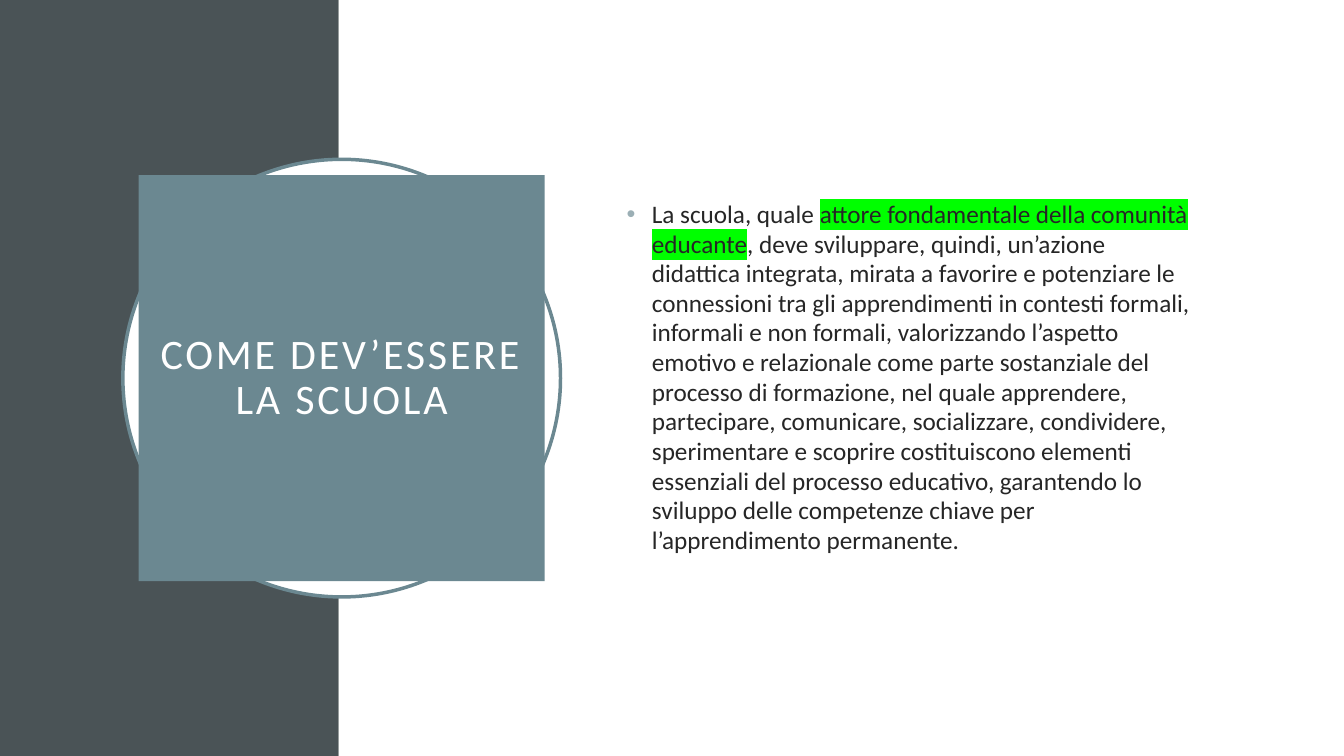
from lxml import etree
from pptx import Presentation
from pptx.dml.color import RGBColor
from pptx.enum.shapes import MSO_SHAPE
from pptx.enum.text import MSO_ANCHOR, PP_ALIGN
from pptx.oxml.ns import qn
from pptx.util import Pt

RECTANGLE, OVAL = MSO_SHAPE.RECTANGLE, MSO_SHAPE.OVAL
MIDDLE, CENTER = MSO_ANCHOR.MIDDLE, PP_ALIGN.CENTER

SLATE = RGBColor(0x4A, 0x53, 0x56)
TEAL = RGBColor(0x6B, 0x88, 0x91)
PALE_TEAL = RGBColor(0x9B, 0xAF, 0xB5)
WHITE = RGBColor(0xFF, 0xFF, 0xFF)
INK = RGBColor(0x26, 0x26, 0x26)
GREEN = RGBColor(0x00, 0xFF, 0x00)

FONT = "Calibri"
PAGE_WIDTH, PAGE_HEIGHT = 960, 540
BAND_WIDTH = 242
TITLE = "COME DEV’ESSERE LA SCUOLA"
BODY = [
    ("La scuola, quale ", False),
    ("attore fondamentale della comunità educante", True),
    (", deve sviluppare, quindi, un’azione didattica integrata, mirata a "
     "favorire e potenziare le connessioni tra gli apprendimenti in contesti "
     "formali, informali e non formali, valorizzando l’aspetto emotivo e "
     "relazionale come parte sostanziale del processo di formazione, nel quale "
     "apprendere, partecipare, comunicare, socializzare, condividere, "
     "sperimentare e scoprire costituiscono elementi essenziali del processo "
     "educativo, garantendo lo sviluppo delle competenze chiave per "
     "l’apprendimento permanente.", False),
]


def add_filled(page, kind, left, top, width, height, color):
    """Add a plain filled shape without outline or shadow."""
    shape = page.shapes.add_shape(kind, Pt(left), Pt(top), Pt(width), Pt(height))
    shape.shadow.inherit = False
    shape.fill.solid()
    shape.fill.fore_color.rgb = color
    shape.line.fill.background()
    return shape


def style_span(span, size, color):
    """Set the font, size and colour of a run."""
    span.font.name = FONT
    span.font.size = Pt(size)
    span.font.color.rgb = color


def add_color(parent, color):
    """Append an RGB colour element to the parent."""
    etree.SubElement(parent, qn("a:srgbClr"), val=str(color))


def highlight(span, color):
    """Mark a coloured run with a highlight."""
    mark = etree.Element(qn("a:highlight"))
    add_color(mark, color)
    span.font.fill
    span._r.rPr.find(qn("a:solidFill")).addnext(mark)


def add_bullet(para, color, indent):
    """Give a paragraph a coloured bullet with a hanging indent."""
    properties = para._p.get_or_add_pPr()
    properties.set("marL", str(Pt(indent)))
    properties.set("indent", str(-Pt(indent)))
    add_color(etree.SubElement(properties, qn("a:buClr")), color)
    etree.SubElement(properties, qn("a:buFont"), typeface="Arial")
    etree.SubElement(properties, qn("a:buChar"), char="•")


def add_background(page):
    """Split the page into a dark band and a white area."""
    add_filled(page, RECTANGLE, 0, 0, BAND_WIDTH, PAGE_HEIGHT, SLATE)
    add_filled(page, RECTANGLE, BAND_WIDTH, 0,
               PAGE_WIDTH - BAND_WIDTH, PAGE_HEIGHT, WHITE)


def add_title(page, left, top, size):
    """Place the title square centred on an outlined circle."""
    circle = add_filled(page, OVAL, left, top, size, size, WHITE)
    circle.line.color.rgb = TEAL
    circle.line.width = Pt(2.5)

    gap = 11.3
    side = size - 2 * gap
    box = add_filled(page, RECTANGLE, left + gap, top + gap, side, side, TEAL)
    frame = box.text_frame
    frame.word_wrap = True
    frame.vertical_anchor = MIDDLE
    frame.margin_left = frame.margin_right = Pt(14.4)
    frame.margin_top = frame.margin_bottom = Pt(14.4)
    frame.text = TITLE
    para = frame.paragraphs[0]
    para.alignment = CENTER
    para.line_spacing = 0.9
    span = para.runs[0]
    style_span(span, 30, WHITE)
    span._r.get_or_add_rPr().set("spc", "200")


def add_body(page, left, top, width, height):
    """Place the bulleted text, vertically centred in its box."""
    box = page.shapes.add_textbox(Pt(left), Pt(top), Pt(width), Pt(height))
    frame = box.text_frame
    frame.word_wrap = True
    frame.vertical_anchor = MIDDLE
    para = frame.paragraphs[0]
    para.line_spacing = 0.98
    para.space_before = Pt(10)
    add_bullet(para, PALE_TEAL, 18)
    for text, marked in BODY:
        span = para.add_run()
        span.text = text
        style_span(span, 18, INK)
        if marked:
            highlight(span, GREEN)


def main():
    """Build the slide and save it."""
    deck = Presentation()
    deck.slide_width, deck.slide_height = Pt(PAGE_WIDTH), Pt(PAGE_HEIGHT)
    page = deck.slides.add_slide(deck.slide_layouts[6])
    add_background(page)
    add_title(page, 87.8, 113.8, 312.6)
    add_body(page, 440.6, 110.2, 419, 319)
    deck.save("out.pptx")


if __name__ == "__main__":
    main()
